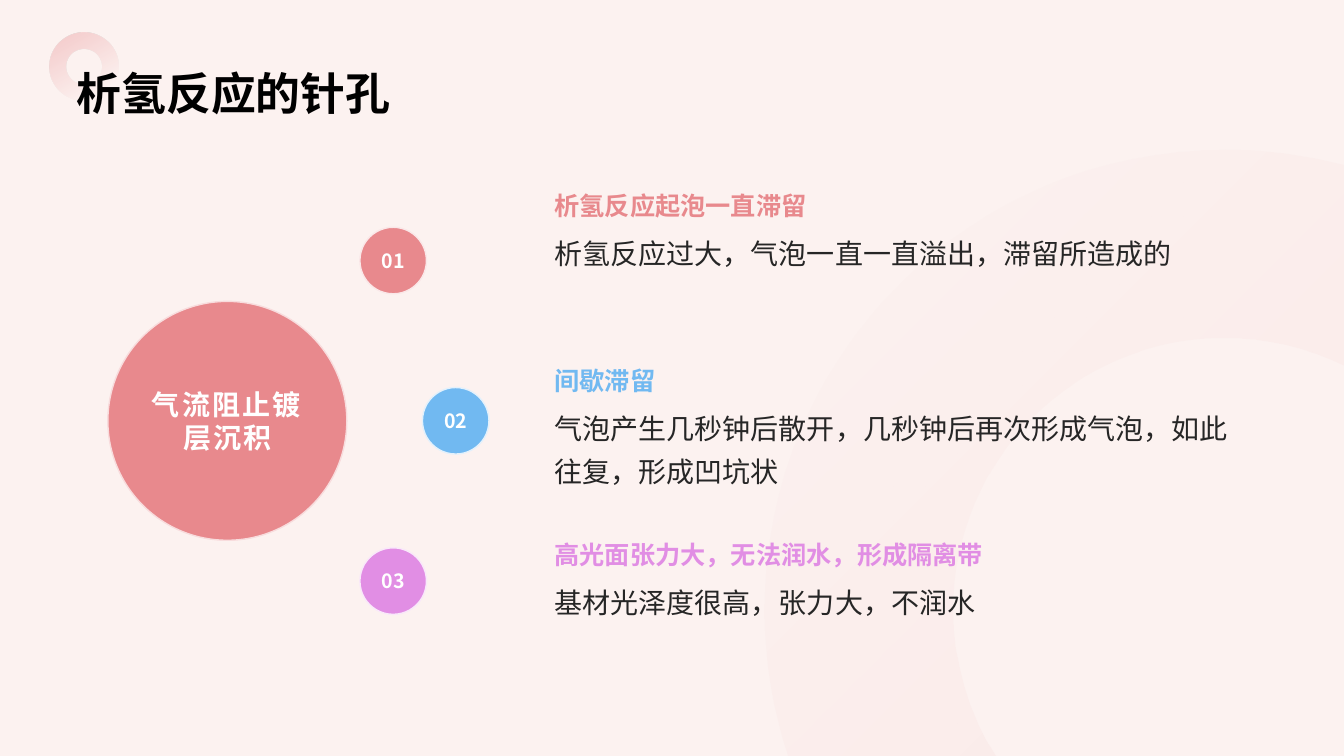
from itertools import pairwise
from math import acos, asin, cos, pi, sin, tan

from lxml.etree import SubElement
from pptx import Presentation
from pptx.dml.color import RGBColor
from pptx.enum.shapes import MSO_SHAPE as Shape
from pptx.enum.text import MSO_ANCHOR as Anchor, MSO_AUTO_SIZE as AutoSize, PP_ALIGN as Align
from pptx.oxml.ns import qn
from pptx.util import Inches, Pt

WIDTH, HEIGHT = 13.33, 7.5
COLORS = {
    "background": "FCF2F0", "title": "000000", "body": "262626", "white": "FFFFFF",
    "rose": "E8898D", "blue": "71B9F1", "violet": "E18EE4",
    "rose_edge": "FAE7E8", "blue_edge": "E3F1FC", "violet_edge": "F9E8FA",
    "hub_edge": "F8DCDD",
}
CJK_FONT = "Noto Sans CJK SC"
NO_INSETS = dict.fromkeys(("margin_left", "margin_top", "margin_right", "margin_bottom"), 0)
HUB_TEXT = "气流阻止镀层沉积"
CAUSES = [
    ("rose", "析氢反应起泡一直滞留", "析氢反应过大，气泡一直一直溢出，滞留所造成的"),
    ("blue", "间歇滞留", "气泡产生几秒钟后散开，几秒钟后再次形成气泡，如此往复，形成凹坑状"),
    ("violet", "高光面张力大，无法润水，形成隔离带", "基材光泽度很高，张力大，不润水"),
]


def rgb(color):
    return RGBColor.from_string(COLORS[color])


def inches(*lengths):
    return [Inches(length) for length in lengths]


def set_all(target, values):
    for key, value in values.items():
        setattr(target, key, value)


def write(shape, text, size, color, bold=False, font=CJK_FONT, spacing=0, frame=None, paragraph=None):
    """Fill a shape with one formatted paragraph."""
    text_frame = shape.text_frame
    set_all(text_frame, {"word_wrap": True, "auto_size": AutoSize.NONE, **(frame or {})})
    line = text_frame.paragraphs[0]
    set_all(line, paragraph or {})
    run = line.add_run()
    run.text = text
    set_all(run.font, {"size": Pt(size), "bold": bold, "name": font})
    run.font.color.rgb = rgb(color)
    properties = run.font._element
    SubElement(properties, qn("a:ea")).set("typeface", CJK_FONT)
    if spacing:
        properties.set("spc", str(round(spacing * 100)))


def fade(shape, angle, start_opacity, end_position):
    """Fade rose from a partial opacity to fully clear, without an outline."""
    shape.shadow.inherit = False
    shape.line.fill.background()
    shape.fill.gradient()
    shape.fill.gradient_angle = angle
    for stop, position, opacity in zip(shape.fill.gradient_stops, (0, end_position), (start_opacity, 0)):
        stop.position = position
        stop.color.rgb = rgb("rose")
        color_node = stop._gs.find(qn("a:srgbClr"))
        SubElement(color_node, qn("a:alpha")).set("val", str(round(opacity * 100000)))


def curve_lines(shape, starts):
    """Turn each three line segments from the given indexes into one Bézier curve."""
    segments = list(shape._element.iter(qn("a:lnTo")))
    for start in starts:
        first, *controls = segments[start:start + 3]
        first.tag = qn("a:cubicBezTo")
        for segment in controls:
            first.append(segment[0])
            segment.getparent().remove(segment)


def add_corner_ring(slide, center_x, center_y, outer, inner):
    """Draw a large ring cut off by the right and bottom slide edges."""
    def arc(radius):
        def point(angle, lead=0):
            return (center_x + radius * (cos(angle) - lead * sin(angle)),
                    center_y - radius * (sin(angle) + lead * cos(angle)))

        start = acos((WIDTH - center_x) / radius)
        end = pi + asin((HEIGHT - center_y) / radius)
        points = [point(start)]
        for first, last in pairwise((start, pi / 2, pi, end)):
            lead = 4 / 3 * tan((last - first) / 4)
            points += [point(first, lead), point(last, -lead), point(last)]
        return points

    outline = [inches(*point) for point in arc(outer) + arc(inner)[::-1]]
    builder = slide.shapes.build_freeform(*outline[0])
    builder.add_line_segments(outline[1:], close=True)
    ring = builder.convert_to_shape()
    curve_lines(ring, (0, 3, 6, 10, 13, 16))
    fade(ring, 135, 0.08, 1)


def add_title(slide, left, top, width, height):
    ring = slide.shapes.add_shape(Shape.DONUT, *inches(left - 0.27, top - 0.08, 0.68, 0.68))
    ring.adjustments[0] = 0.244
    ring.rotation = 138
    fade(ring, 78, 0.5, 0.72)
    title = slide.shapes.title
    slide.shapes._spTree.append(title._element)
    set_all(title, dict(zip(("left", "top", "width", "height"), inches(left, top, width, height))))
    write(title, "析氢反应的针孔", 32, "title", True, "Arial",
          frame={**NO_INSETS, "vertical_anchor": Anchor.BOTTOM}, paragraph={"alignment": Align.LEFT})


def add_disc(slide, left, top, diameter, text, size, fill, edge, spacing=0, frame=None):
    disc = slide.shapes.add_shape(Shape.OVAL, *inches(left, top, diameter, diameter))
    disc.shadow.inherit = False
    disc.fill.solid()
    disc.fill.fore_color.rgb = rgb(fill)
    disc.line.color.rgb = rgb(edge)
    disc.line.width = Pt(1)
    write(disc, text, size, "white", True, spacing=spacing,
          frame={"vertical_anchor": Anchor.MIDDLE, **(frame or {})}, paragraph={"alignment": Align.CENTER})


def add_hub(slide, left, top, diameter):
    """Place the main disc and its numbered satellites."""
    satellite, pitch, bulge = 0.66, 1.59, 0.62
    middle = top + (diameter - satellite) / 2
    for index, (color, _, _) in enumerate(CAUSES):
        offset = index - 1
        x = left + diameter + 0.75 - bulge * abs(offset)
        add_disc(slide, x, middle + pitch * offset, satellite, f"{index + 1:02}", 14,
                 color, f"{color}_edge", frame={"word_wrap": False})
    add_disc(slide, left, top, diameter, HUB_TEXT, 20, "rose", "hub_edge", 1.5, NO_INSETS)


def add_causes(slide, left, top, width, height):
    pitch = height / len(CAUSES)
    heading_height, body_height = 0.64, 1.04
    for index, (color, heading, body) in enumerate(CAUSES):
        y = top + index * pitch
        heading_box = slide.shapes.add_textbox(*inches(left, y, width, heading_height))
        write(heading_box, heading, 18, color, True,
              frame={**NO_INSETS, "margin_bottom": Inches(0.04), "vertical_anchor": Anchor.BOTTOM})
        body_box = slide.shapes.add_textbox(*inches(left, y + heading_height + 0.02, width, body_height))
        write(body_box, body, 20, "body", frame=NO_INSETS, paragraph={"line_spacing": 1.3})


def main():
    deck = Presentation()
    deck.slide_width, deck.slide_height = inches(WIDTH, HEIGHT)
    slide = deck.slides.add_slide(deck.slide_layouts[5])
    slide.background.fill.solid()
    slide.background.fill.fore_color.rgb = rgb("background")
    add_corner_ring(slide, 12.14, 6.04, 4.56, 2.69)
    add_title(slide, 0.76, 0.4, 11.81, 0.79)
    add_causes(slide, 5.5, 1.59, 6.79, 5.19)
    add_hub(slide, 1.07, 2.99, 2.37)
    deck.save("out.pptx")


if __name__ == "__main__":
    main()
